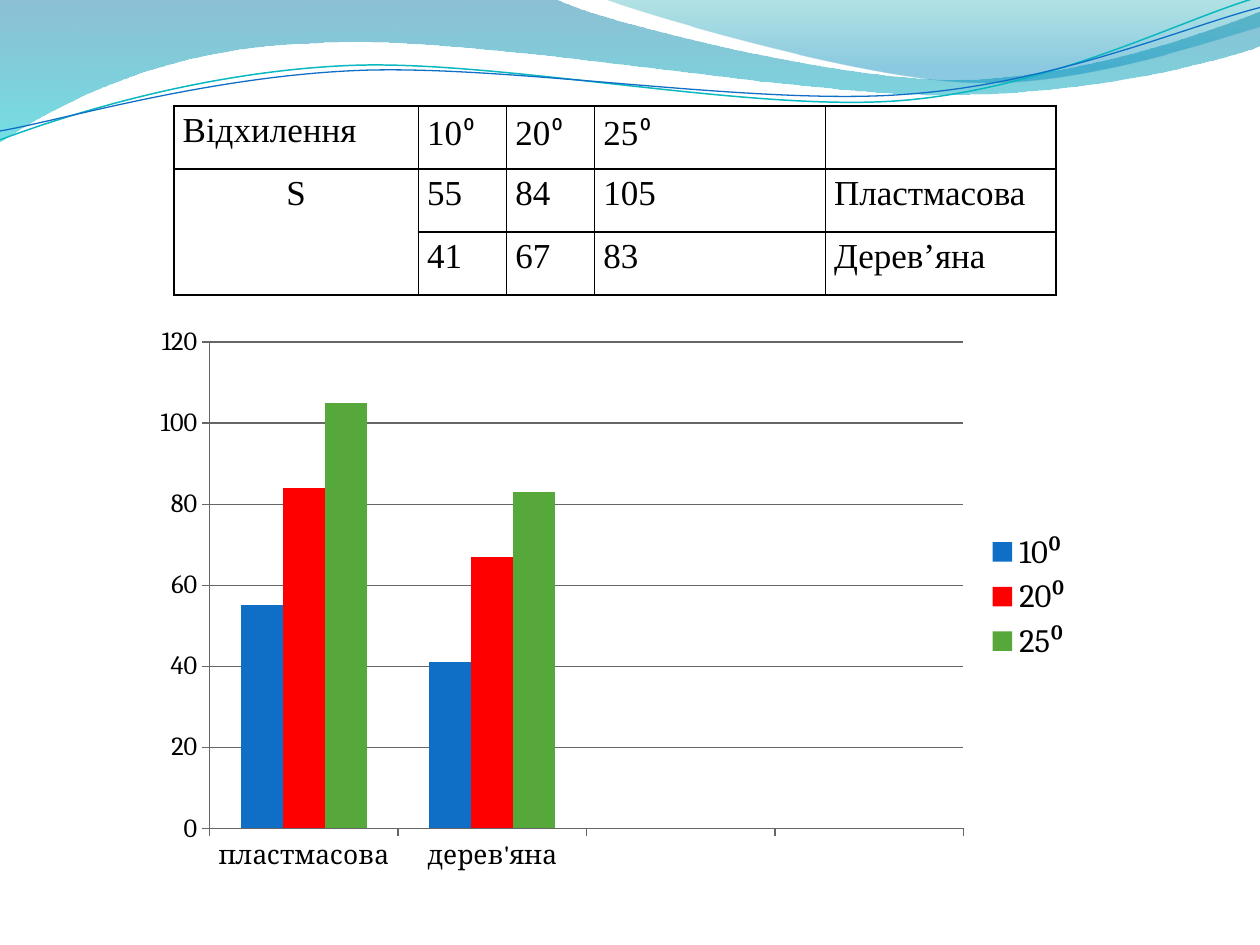
import math
from dataclasses import dataclass

from lxml import etree
from pptx import Presentation
from pptx import util as u
from pptx.chart.data import CategoryChartData
from pptx.dml.color import RGBColor
from pptx.enum import chart as charts, text
from pptx.oxml import parse_xml
from pptx.oxml.ns import nsdecls, qn


@dataclass(frozen=True)
class Theme:
    black: str = "000000"
    axis: str = "666666"
    blue: str = "0F6FC6"
    red: str = "FF0000"
    green: str = "55A839"
    teal: str = "0AB8BF"
    table_font: str = "Times New Roman"
    degree_font: str = "Calibri"
    chart_font: str = "Cambria"
    table_size: float = 20
    chart_size: float = 15
    legend_size: float = 18.6


theme = Theme()
color = RGBColor.from_string


def draw_wave(slide, start, segments, closed, center=(0, 0), rotation=0):
    """Draw lines (one point) and cubic curves (three points) as a freeform."""
    angle = math.radians(-rotation)

    def place(point):
        x, y = point[0] - center[0], point[1] - center[1]
        return (u.Inches(center[0] + x * math.cos(angle) - y * math.sin(angle)),
                u.Inches(center[1] + x * math.sin(angle) + y * math.cos(angle)))

    curves = [[place(point) for point in segment] for segment in segments]
    builder = slide.shapes.build_freeform(*place(start), scale=1.0)
    builder.add_line_segments([curve[-1] for curve in curves], close=closed)
    shape = builder.convert_to_shape()
    lines = list(shape._element.iter(qn("a:lnTo")))
    for line, curve in zip(lines, curves):
        if len(curve) == 3:
            line.tag = qn("a:cubicBezTo")
            line.clear()
            for x, y in curve:
                etree.SubElement(line, qn("a:pt"), x=str(x - shape.left), y=str(y - shape.top))
    shape.rotation = rotation
    shape.shadow.inherit = False
    return shape


presentation = Presentation()
presentation.slide_width, presentation.slide_height = u.Inches(10), u.Inches(7.5)
slide = presentation.slides.add_slide(presentation.slide_layouts[6])

# Filled waves: start, segments, gradient stops (position, colour, opacity %)
filled_waves = [
    ((0, 0),
     [[(4.4, -0.01)],
      [(4.76, 0.17), (6.64, 0.63), (7.58, 0.63)],
      [(8.53, 0.63), (9.58, 0.26), (10, 0.09)],
      [(10.01, 0.36)],
      [(9.83, 0.44), (8.7, 0.76), (7.46, 0.75)],
      [(6.22, 0.75), (3.82, 0.28), (2.57, 0.34)],
      [(1.29, 0.36), (0.46, 0.83), (-0.01, 1.13)]],
     [(0, "0074A1", 45), (1, "00C6CF", 55)]),
    ((4.79, -0.01),
     [[(5.09, 0.11), (6.82, 0.62), (7.69, 0.65)],
      [(8.56, 0.69), (9.61, 0.32), (10, 0.21)],
      [(10, 0)]],
     [(0, "00A1A9", 30), (0.8, "008BBF", 45)]),
]
for start, segments, stops in filled_waves:
    wave = draw_wave(slide, start, segments, closed=True)
    wave.line.fill.background()
    wave.fill.gradient()
    wave.fill.gradient_angle = 270
    for stop, (position, shade, _) in zip(wave.fill.gradient_stops, stops):
        stop.position = position
        stop.color.rgb = color(shade)
    shades = list(wave._element.spPr.iter(qn("a:srgbClr")))
    for shade, (_, _, opacity) in zip(shades, stops):
        etree.SubElement(shade, qn("a:alpha"), val=str(opacity * 1000))

# Thin wave lines, slightly rotated
wave_lines = [
    ((0, 1.11),
     [[(0.48, 0.93), (1.58, 0.57), (2.77, 0.52)],
      [(3.95, 0.47), (5.93, 0.89), (7.13, 0.8)],
      [(8.33, 0.71), (9.38, 0.15), (9.98, -0.02)]],
     (4.99, 0.58), theme.teal, 0.85),
    ((0, 1.04),
     [[(0.47, 0.96), (1.64, 0.61), (2.83, 0.56)],
      [(4.03, 0.51), (5.97, 0.84), (7.17, 0.75)],
      [(8.36, 0.67), (9.41, 0.21), (10, 0.06)]],
     (5, 0.59), theme.blue, 0.75),
]
for start, segments, center, shade, width in wave_lines:
    wave = draw_wave(slide, start, segments, closed=False, center=center, rotation=357.3)
    wave.fill.background()
    wave.line.color.rgb = color(shade)
    wave.line.width = u.Pt(width)

# Table of deviations
rows = [
    ["Відхилення", "10⁰", "20⁰", "25⁰", ""],
    ["S", "55", "84", "105", "Пластмасова"],
    ["", "41", "67", "83", "Дерев’яна"],
]
column_widths = [1.94, 0.7, 0.7, 1.83, 1.83]
table = slide.shapes.add_table(len(rows), len(column_widths), u.Inches(1.38), u.Inches(0.84),
                               u.Inches(sum(column_widths)), u.Inches(1.5)).table
table.first_row = table.horz_banding = False
for column, width in zip(table.columns, column_widths):
    column.width = u.Inches(width)
for row_index, row in enumerate(rows):
    for column_index, value in enumerate(row):
        cell = table.cell(row_index, column_index)
        cell.margin_left = cell.margin_right = u.Inches(0.07)
        cell.margin_top = cell.margin_bottom = 0
        paragraph = cell.text_frame.paragraphs[0]
        paragraph.line_spacing = 1.15
        paragraph.font.size = u.Pt(theme.table_size)
        number = value.rstrip("⁰")
        for part, font in ((number, theme.table_font),
                           (value[len(number):], theme.degree_font)):
            if part:
                run = paragraph.add_run()
                run.text = part
                run.font.name = font
                run.font.size = u.Pt(theme.table_size)
                run.font.color.rgb = color(theme.black)
        properties = cell._tc.get_or_add_tcPr()
        for side in ("lnL", "lnR", "lnT", "lnB"):
            properties.append(parse_xml(
                f'<a:{side} {nsdecls("a")} w="12700"><a:solidFill>'
                f'<a:srgbClr val="{theme.black}"/></a:solidFill></a:{side}>'))
        cell.fill.background()
table.cell(1, 0).merge(table.cell(2, 0))
table.cell(1, 0).text_frame.paragraphs[0].alignment = text.PP_ALIGN.CENTER

# Column chart, with room for two more categories
chart_data = CategoryChartData()
chart_data.categories = ["пластмасова", "дерев'яна", "", ""]
series_rows = [
    ("10⁰", (55, 41, None, None), theme.blue),
    ("20⁰", (84, 67, None, None), theme.red),
    ("25⁰", (105, 83, None, None), theme.green),
]
for name, values, _ in series_rows:
    chart_data.add_series(name, values)
chart = slide.shapes.add_chart(charts.XL_CHART_TYPE.COLUMN_CLUSTERED, u.Inches(1.14),
                               u.Inches(2.49), u.Inches(7.48), u.Inches(4.49), chart_data).chart
chart.has_title = False
chart.font.name = theme.chart_font
chart.font.size = u.Pt(theme.chart_size)
chart.font.color.rgb = color(theme.black)
plot = chart.plots[0]
plot.vary_by_categories = False
plot.gap_width, plot.overlap = 150, 0
for series, (_, _, shade) in zip(plot.series, series_rows):
    series.format.fill.solid()
    series.format.fill.fore_color.rgb = color(shade)

# Axes and legend
value_axis = chart.value_axis
value_axis.minimum_scale, value_axis.maximum_scale, value_axis.major_unit = 0, 120, 20
value_axis.has_major_gridlines = True
for axis in (chart.category_axis, value_axis):
    axis.major_tick_mark = charts.XL_TICK_MARK.OUTSIDE
    axis.format.line.color.rgb = color(theme.axis)
value_axis.major_gridlines.format.line.color.rgb = color(theme.axis)
chart.has_legend = True
chart.legend.position = charts.XL_LEGEND_POSITION.RIGHT
chart.legend.include_in_layout = False
chart.legend.font.name = theme.chart_font
chart.legend.font.size = u.Pt(theme.legend_size)
chart.legend.font.color.rgb = color(theme.black)

# Fixed plot area
plot_area = chart._chartSpace.chart.plotArea
for old_layout in plot_area.findall(qn("c:layout")):
    plot_area.remove(old_layout)
plot_area.insert(0, parse_xml(
    f'<c:layout {nsdecls("c")}><c:manualLayout><c:layoutTarget val="inner"/>'
    '<c:xMode val="edge"/><c:yMode val="edge"/><c:x val="0.07"/><c:y val="0.05"/>'
    '<c:w val="0.8"/><c:h val="0.86"/></c:manualLayout></c:layout>'))

presentation.save("out.pptx")
